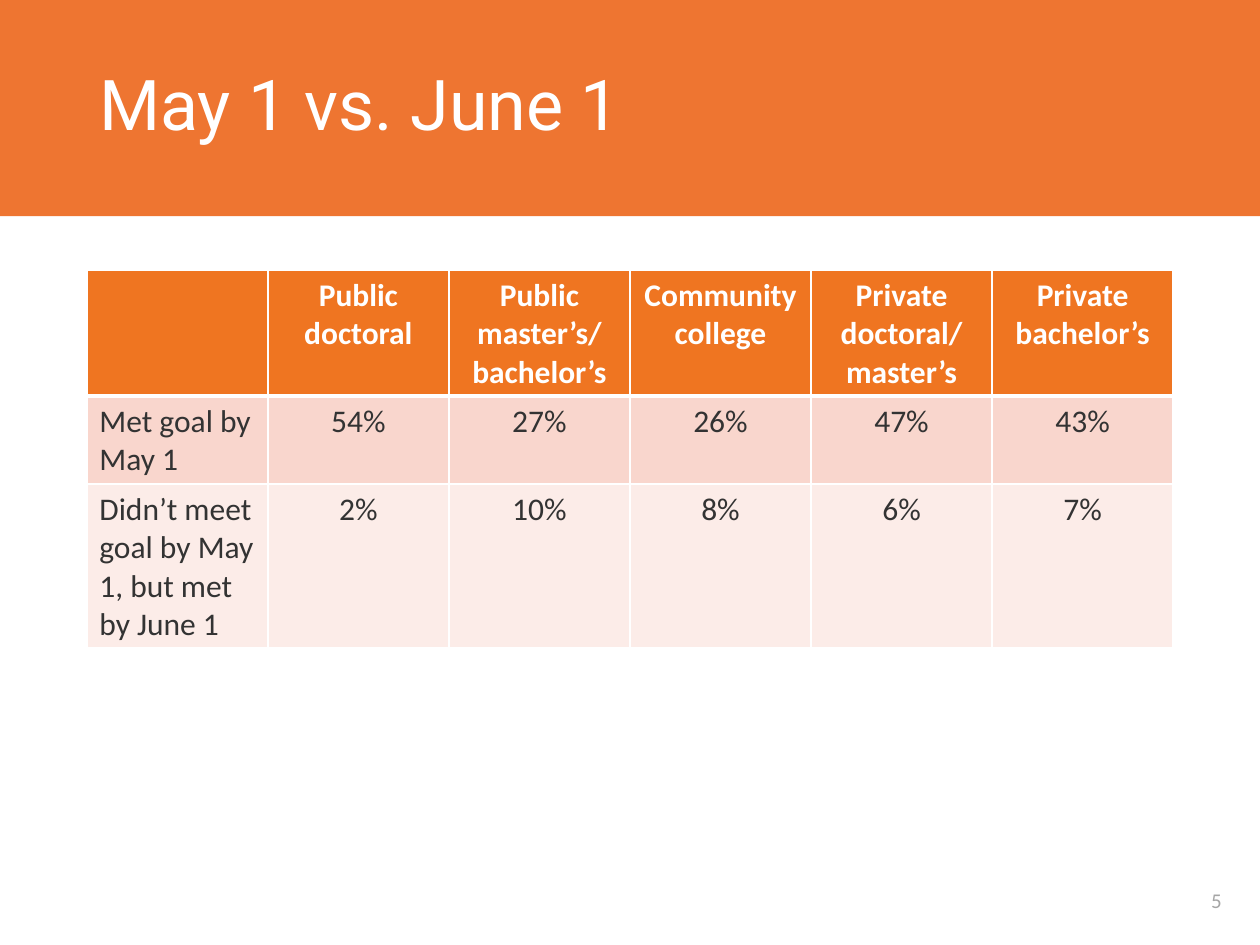
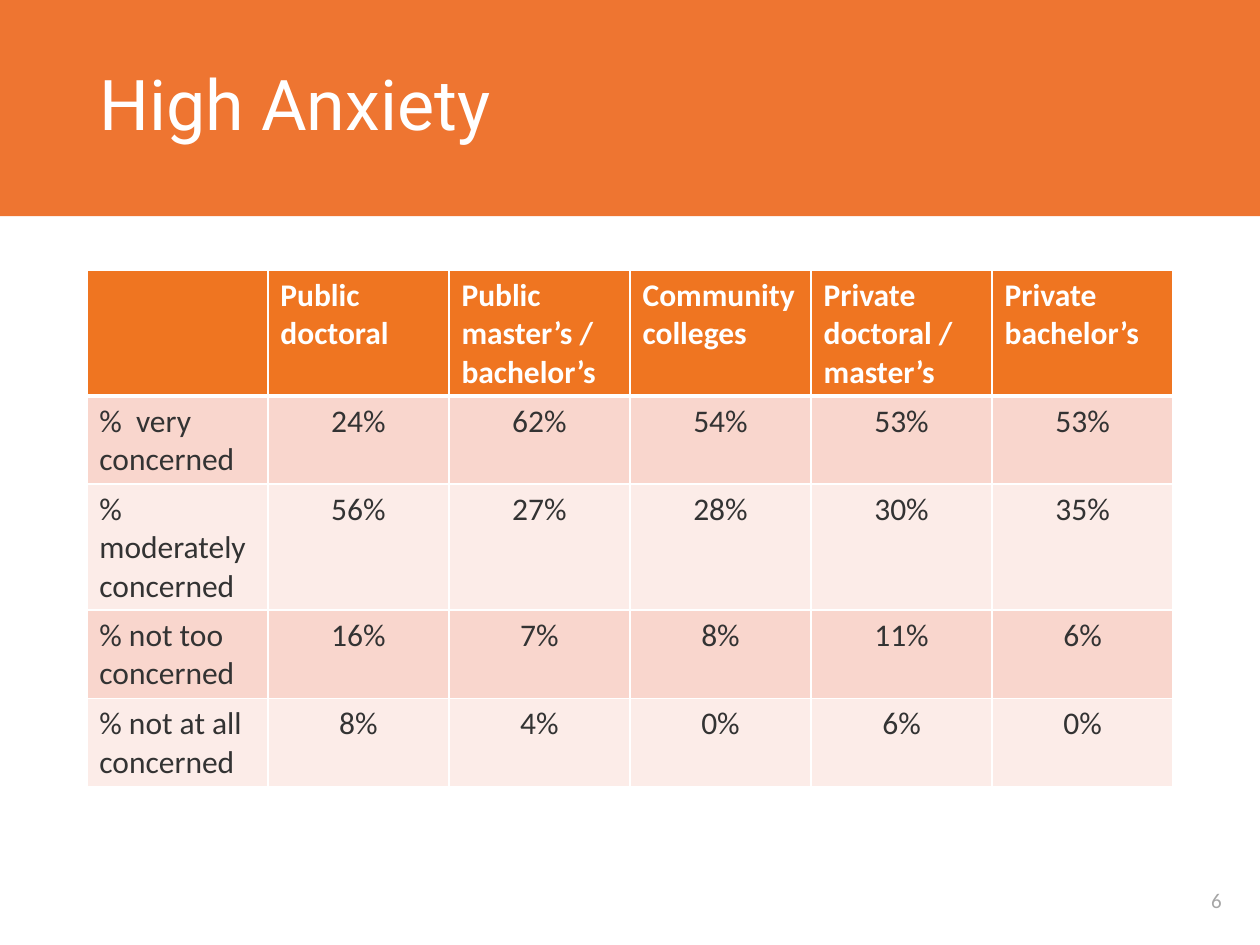
from lxml import etree
from pptx import Presentation
from pptx.dml.color import RGBColor
from pptx.enum import shapes, text
from pptx.oxml.ns import qn
from pptx.util import Cm, Pt

LEFT, CENTER = text.PP_ALIGN.LEFT, text.PP_ALIGN.CENTER

SLIDES = [
    dict(
        number=5, title="May 1 vs. June 1", header_align=CENTER,
        rows=[
            ["", "Public doctoral", "Public master’s/ bachelor’s", "Community college",
             "Private doctoral/ master’s", "Private bachelor’s"],
            ["Met goal by May 1", "54%", "27%", "26%", "47%", "43%"],
            ["Didn’t meet goal by May 1, but met by June 1", "2%", "10%", "8%", "6%", "7%"],
        ],
    ),
    dict(
        number=6, title="High Anxiety", header_align=LEFT,
        rows=[
            ["", "Public doctoral", "Public master’s / bachelor’s", "Community colleges",
             "Private doctoral / master’s", "Private bachelor’s"],
            ["%  very concerned", "24%", "62%", "54%", "53%", "53%"],
            ["% moderately\nconcerned", "56%", "27%", "28%", "30%", "35%"],
            ["% not too concerned", "16%", "7%", "8%", "11%", "6%"],
            ["% not at all concerned", "8%", "4%", "0%", "6%", "0%"],
        ],
    ),
]

BAND, HEADER, STRIPES = "EE7531", "EF7521", ("F9D6CD", "FCECE8")
WHITE, INK, GREY = "FFFFFF", "333333", "A6A6A6"
BODY_FONT, TITLE_FONT = "Calibri", "Roboto"

SLIDE_W, SLIDE_H = Cm(25.4), Cm(19.05)
MARGIN, BAND_H = Cm(1.75), Cm(4.36)
CONTENT_W = SLIDE_W - 2 * MARGIN
TABLE_TOP, ROW_H = Cm(5.44), Cm(1.04)


def rgb(hex_color):
    return RGBColor.from_string(hex_color)


def paint(target, color):
    target.fill.solid()
    target.fill.fore_color.rgb = rgb(color)


def write(tf, content, size=18, color=INK, font=BODY_FONT, bold=False,
          align=LEFT, anchor=None, spacing=None):
    tf.text = content
    tf.word_wrap = True
    if anchor is not None:
        tf.vertical_anchor = anchor
    for p in tf.paragraphs:
        p.alignment = align
        p.line_spacing = spacing
        p.font.size, p.font.name, p.font.bold = Pt(size), font, bold
        p.font.color.rgb = rgb(color)


def add_borders(cell, **widths):
    """Draw white cell borders; widths are points for L, R, T and B, in that order."""
    tc_pr = cell._tc.get_or_add_tcPr()
    for side, width in widths.items():
        ln = etree.SubElement(tc_pr, qn(f"a:ln{side}"), w=str(Pt(width)))
        fill = etree.SubElement(ln, qn("a:solidFill"))
        etree.SubElement(fill, qn("a:srgbClr"), val=WHITE)


def add_frame(prs, title, number):
    """Add a slide with the title band, title and page number."""
    s = prs.slides.add_slide(prs.slide_layouts[5])
    band = s.shapes.add_shape(shapes.MSO_SHAPE.RECTANGLE, 0, 0, SLIDE_W, BAND_H)
    band.shadow.inherit = False
    paint(band, BAND)
    band.line.fill.background()
    s.shapes._spTree.insert(2, band._element)  # behind the title

    heading = s.shapes.title
    heading.left, heading.top, heading.width, heading.height = MARGIN, 0, CONTENT_W, BAND_H
    write(heading.text_frame, title, size=40, color=WHITE, font=TITLE_FONT,
          anchor=text.MSO_ANCHOR.MIDDLE, spacing=0.9)
    heading.text_frame.auto_size = text.MSO_AUTO_SIZE.NONE

    page = s.shapes.add_textbox(SLIDE_W - MARGIN, Cm(17.65), MARGIN, Cm(1))
    write(page.text_frame, str(number), size=12, color=GREY, align=CENTER,
          anchor=text.MSO_ANCHOR.MIDDLE)
    return s


def add_survey_table(s, rows, header_align):
    n_cols = len(rows[0])
    table = s.shapes.add_table(len(rows), n_cols, MARGIN, TABLE_TOP,
                               CONTENT_W, ROW_H * len(rows)).table
    for column in table.columns:
        column.width = CONTENT_W // n_cols
    for i, row in enumerate(rows):
        for j, value in enumerate(row):
            cell = table.cell(i, j)
            add_borders(cell, L=1, R=1, T=3 if i == 1 else 1, B=3 if i == 0 else 1)
            if i == 0:
                paint(cell, HEADER)
                write(cell.text_frame, value, color=WHITE, bold=True, align=header_align)
            else:
                paint(cell, STRIPES[(i - 1) % 2])
                write(cell.text_frame, value, align=CENTER if j else LEFT)


def main():
    prs = Presentation()
    prs.slide_width, prs.slide_height = SLIDE_W, SLIDE_H
    for content in SLIDES:
        s = add_frame(prs, content["title"], content["number"])
        add_survey_table(s, content["rows"], content["header_align"])
    prs.save("out.pptx")


if __name__ == "__main__":
    main()
